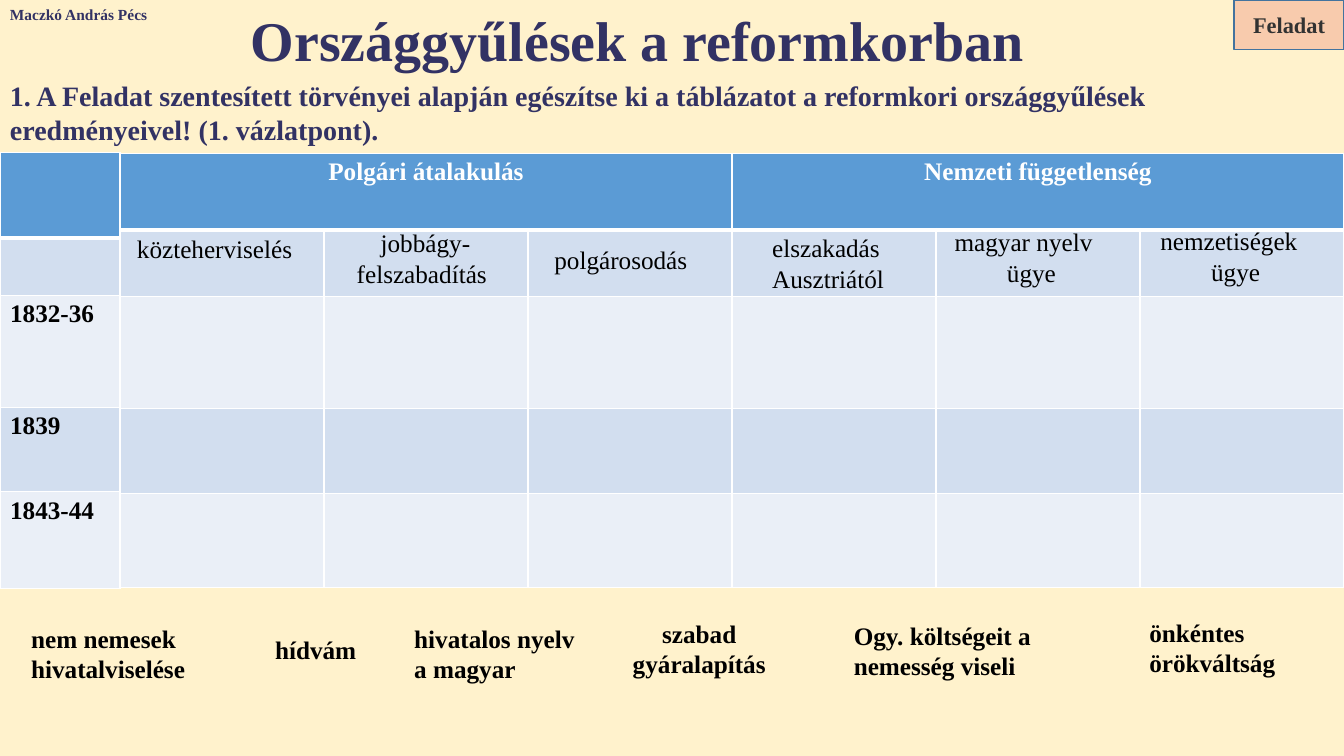
from dataclasses import dataclass

from lxml.etree import SubElement
from pptx import Presentation
from pptx.dml.color import RGBColor
from pptx.enum.shapes import MSO_SHAPE
from pptx.enum.text import MSO_ANCHOR, MSO_AUTO_SIZE, PP_ALIGN
from pptx.oxml.ns import qn
from pptx.slide import Slide
from pptx.table import Table, _Cell
from pptx.text.text import TextFrame
from pptx.util import Inches, Pt

FONT = "Times New Roman"
COLORS = {
    "background": "FFF2CC",
    "navy": "323264",
    "badge": "F8CBAD",
    "badge_line": "43739E",
    "badge_text": "323232",
    "header": "5B9BD5",
    "dark_band": "D2DEEF",
    "light_band": "EAEFF7",
    "white": "FFFFFF",
    "black": "000000",
}
BANDS = ("header", "dark_band", "light_band", "dark_band", "light_band")
LEFT, CENTER = PP_ALIGN.LEFT, PP_ALIGN.CENTER


@dataclass
class Label:
    lines: tuple[str, ...]
    left: float
    top: float
    width: float
    height: float = 0.71
    size: float = 18
    color: str = "black"
    bold: bool = True
    alignments: tuple[PP_ALIGN, ...] = (LEFT, LEFT)
    wrap: bool = True


@dataclass
class Grid:
    left: float
    top: float
    column_widths: tuple[float, ...]
    row_heights: tuple[float, ...]


LABELS = (
    Label(("Maczkó András Pécs",), 0, 0, 1.59, 0.29, size=11, color="navy"),
    Label(("1. A Feladat szentesített törvényei alapján egészítse ki a táblázatot "
           "a reformkori országgyűlések eredményeivel! (1. vázlatpont).",),
          0, 0.73, 13.33, 0.77, size=20, color="navy"),
    Label(("jobbágy-", "felszabadítás"), 3.44, 2.21, 1.56, bold=False,
          alignments=(CENTER, LEFT)),
    Label(("elszakadás", "Ausztriától"), 7.56, 2.26, 1.34, bold=False, wrap=False),
    Label(("magyar nyelv", "ügye"), 9.37, 2.2, 1.72, bold=False,
          alignments=(LEFT, CENTER)),
    Label(("nemzetiségek", "ügye"), 11.41, 2.19, 1.69, bold=False,
          alignments=(LEFT, CENTER)),
    Label(("közteherviselés",), 1.26, 2.27, 1.92, 0.4, bold=False),
    Label(("polgárosodás",), 5.4, 2.37, 1.62, 0.4, bold=False),
    Label(("Ogy. költségeit a nemesség viseli",), 8.37, 6.1, 2),
    Label(("hídvám",), 2.63, 6.24, 1.03, 0.4),
    Label(("szabad gyáralapítás",), 6.14, 6.08, 1.59, alignments=(CENTER,)),
    Label(("nem nemesek hivatalviselése",), 0.21, 6.13, 1.81),
    Label(("hivatalos nyelv a magyar",), 4.01, 6.13, 1.93),
    Label(("önkéntes örökváltság",), 11.3, 6.07, 1.68),
)
YEARS_GRID = Grid(0, 1.51, (1.19,), (0.85, 0.57, 1.11, 0.84, 0.96))
TOPICS_GRID = Grid(1.19, 1.52, (12.14 / 6,) * 6, (0.76, 0.66, 1.11, 0.85, 0.93))
YEARS = ("1832-36", "1839", "1843-44")
TOPICS = ("Polgári átalakulás", "Nemzeti függetlenség")


def rgb(name: str) -> RGBColor:
    return RGBColor.from_string(COLORS[name])


def write_lines(frame: TextFrame, lines: tuple[str, ...], size: float, color: str,
                bold: bool = True, alignments: tuple[PP_ALIGN, ...] = (LEFT,)) -> None:
    frame.text = "\n".join(lines)
    for paragraph, alignment in zip(frame.paragraphs, alignments):
        paragraph.alignment = alignment
        paragraph.font.name = FONT
        paragraph.font.size = Pt(size)
        paragraph.font.bold = bold
        paragraph.font.color.rgb = rgb(color)


def add_label(slide: Slide, label: Label) -> None:
    box = slide.shapes.add_textbox(Inches(label.left), Inches(label.top),
                                   Inches(label.width), Inches(label.height))
    box.text_frame.word_wrap = label.wrap
    write_lines(box.text_frame, label.lines, label.size, label.color,
                label.bold, label.alignments)


def set_borders(cell: _Cell, bottom_width: float) -> None:
    """Draw white borders, 1 pt except for the bottom one."""
    properties = cell._tc.get_or_add_tcPr()
    widths = {"a:lnL": 1, "a:lnR": 1, "a:lnT": 1, "a:lnB": bottom_width}
    for tag, width in widths.items():
        line = SubElement(properties, qn(tag), w=str(Pt(width)))
        fill = SubElement(line, qn("a:solidFill"))
        SubElement(fill, qn("a:srgbClr"), val=COLORS["white"])


def add_grid(slide: Slide, grid: Grid) -> Table:
    table = slide.shapes.add_table(
        len(grid.row_heights), len(grid.column_widths),
        Inches(grid.left), Inches(grid.top),
        Inches(sum(grid.column_widths)), Inches(sum(grid.row_heights))).table
    for column, width in zip(table.columns, grid.column_widths):
        column.width = Inches(width)
    for row, height, band in zip(table.rows, grid.row_heights, BANDS):
        row.height = Inches(height)
        for cell in row.cells:
            set_borders(cell, 3 if band == "header" else 1)
            cell.fill.solid()
            cell.fill.fore_color.rgb = rgb(band)
    return table


def add_title(slide: Slide) -> None:
    title = slide.shapes.title
    title.left, title.top = Inches(1.84), Inches(0)
    title.width, title.height = Inches(8.96), Inches(0.77)
    frame = title.text_frame
    frame.auto_size = MSO_AUTO_SIZE.NONE
    frame.vertical_anchor = MSO_ANCHOR.TOP
    write_lines(frame, ("Országgyűlések a reformkorban",), 40, "navy",
                alignments=(CENTER,))


def add_badge(slide: Slide) -> None:
    badge = slide.shapes.add_shape(MSO_SHAPE.RECTANGLE, Inches(12.24), Inches(0),
                                   Inches(1.09), Inches(0.49))
    badge.shadow.inherit = False
    badge.fill.solid()
    badge.fill.fore_color.rgb = rgb("badge")
    badge.line.color.rgb = rgb("badge_line")
    badge.line.width = Pt(1)
    badge.text_frame.vertical_anchor = MSO_ANCHOR.MIDDLE
    write_lines(badge.text_frame, ("Feladat",), 16, "badge_text", alignments=(CENTER,))


def main() -> None:
    presentation = Presentation()
    presentation.slide_width, presentation.slide_height = Inches(13.33), Inches(7.5)
    slide = presentation.slides.add_slide(presentation.slide_layouts[5])
    slide.background.fill.solid()
    slide.background.fill.fore_color.rgb = rgb("background")

    add_title(slide)
    add_badge(slide)

    years_table = add_grid(slide, YEARS_GRID)
    for row, year in enumerate(YEARS, start=2):
        write_lines(years_table.cell(row, 0).text_frame, (year,), 18, "black")

    topics_table = add_grid(slide, TOPICS_GRID)
    for index, topic in enumerate(TOPICS):
        header = topics_table.cell(0, 3 * index)
        header.merge(topics_table.cell(0, 3 * index + 2))
        write_lines(header.text_frame, (topic,), 18, "white", alignments=(CENTER,))

    for label in LABELS:
        add_label(slide, label)
    presentation.save("out.pptx")


if __name__ == "__main__":
    main()
